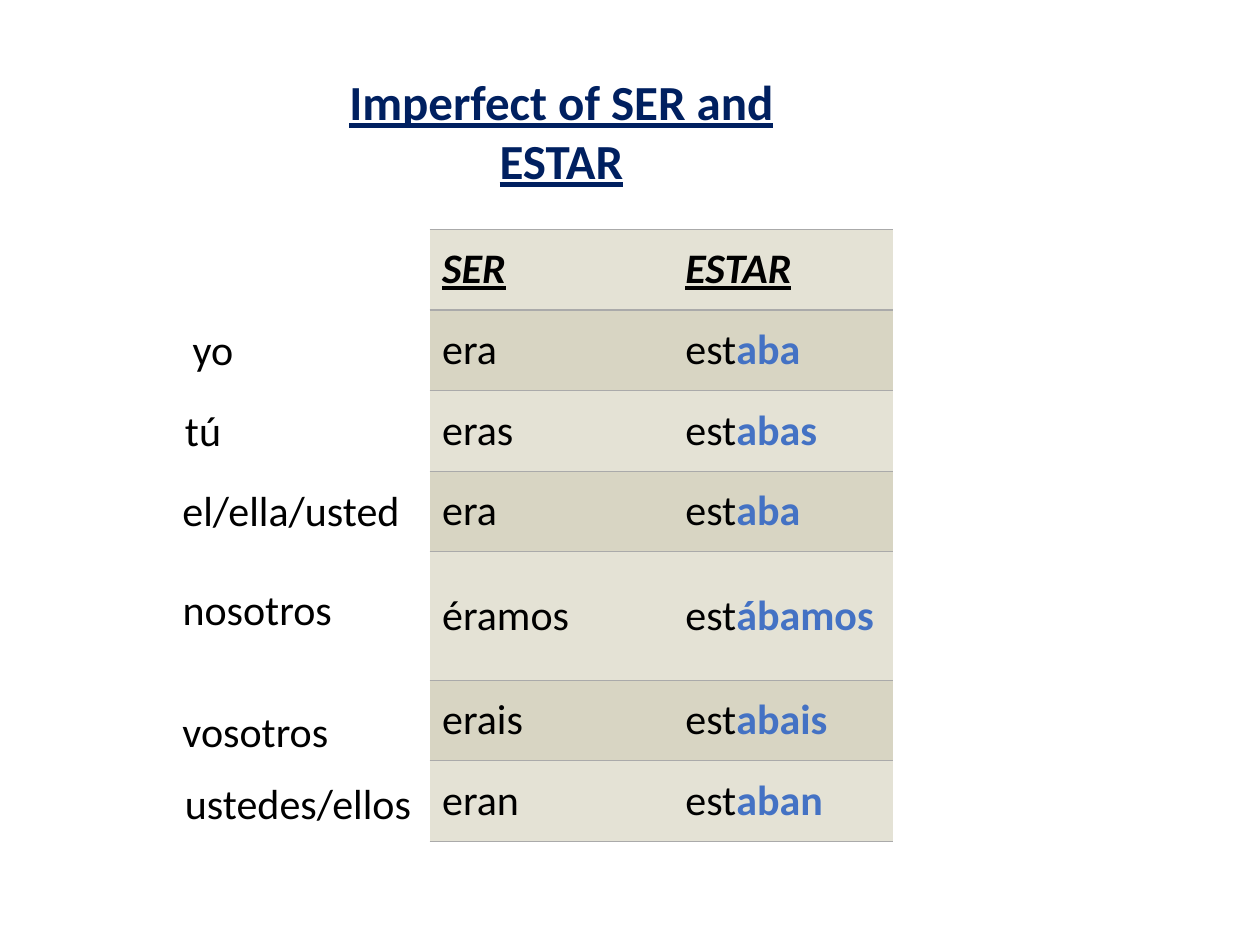
from lxml import etree
from pptx import Presentation
from pptx.dml.color import RGBColor
from pptx.enum.text import MSO_ANCHOR, MSO_AUTO_SIZE, PP_ALIGN
from pptx.oxml.ns import qn
from pptx.util import Inches, Pt

MIDDLE = MSO_ANCHOR.MIDDLE
GROW = MSO_AUTO_SIZE.SHAPE_TO_FIT_TEXT
LEFT, CENTER = PP_ALIGN.LEFT, PP_ALIGN.CENTER

BLACK = RGBColor(0x00, 0x00, 0x00)
NAVY = RGBColor(0x00, 0x20, 0x60)
BLUE = RGBColor(0x44, 0x72, 0xC4)
BANDS = (RGBColor(0xE4, 0xE2, 0xD5), RGBColor(0xD8, 0xD5, 0xC3))
RULE = RGBColor(0xAA, 0xAA, 0xAA)
RULE_WIDTH = Pt(0.75)

BODY = {"name": "Calibri", "size": Pt(24), "bold": False, "italic": False, "underline": False}
HEADER = {**BODY, "bold": True, "italic": True, "underline": True}
ENDING = {**BODY, "bold": True}
TITLE = {**BODY, "size": Pt(28), "bold": True, "underline": True}

COLUMN_WIDTHS = (1.93, 1.75)
ROW_HEIGHT, TALL_ROW_HEIGHT = 0.64, 1.02
VERB_FORMS = (
    ("era", "aba"),
    ("eras", "abas"),
    ("era", "aba"),
    ("éramos", "ábamos"),
    ("erais", "abais"),
    ("eran", "aban"),
)
PRONOUNS = (
    ("yo", 1.43, 2.52, 1.24),
    ("tú", 1.37, 3.16, 1.24),
    ("el/ella/usted", 1.35, 3.8, 1.93),
    ("nosotros", 1.35, 4.58, 1.62),
    ("vosotros", 1.35, 5.55, 1.4),
    ("ustedes/ellos", 1.37, 6.12, 2.03),
)


class VerbPage:
    """Holds the text style and the page being filled."""

    def __init__(self, page):
        self.page = page

    def add_span(self, para, text, style=BODY, color=BLACK):
        span = para.add_run()
        span.text = text
        for name, value in style.items():
            setattr(span.font, name, value)
        span.font.color.rgb = color

    def text_box(self, text, left, top, width, height=0.5, style=BODY, color=BLACK, align=LEFT):
        box = self.page.shapes.add_textbox(
            Inches(left), Inches(top), Inches(width), Inches(height)
        )
        box.text_frame.word_wrap = True
        box.text_frame.auto_size = GROW
        para = box.text_frame.paragraphs[0]
        para.alignment = align
        self.add_span(para, text, style, color)

    def rule_cell(self, cell):
        """Draw rules above and below the cell, and none at its sides."""
        properties = cell._tc.get_or_add_tcPr()
        for index, side in enumerate(("lnL", "lnR", "lnT", "lnB")):
            line = etree.Element(qn(f"a:{side}"), w=str(RULE_WIDTH))
            if side in ("lnT", "lnB"):
                fill = etree.SubElement(line, qn("a:solidFill"))
                etree.SubElement(fill, qn("a:srgbClr"), val=str(RULE))
            else:
                etree.SubElement(line, qn("a:noFill"))
            properties.insert(index, line)

    def table(self, rows, left, top, widths, heights):
        """Add a banded table; each cell is a list of (text, style, color)."""
        table = self.page.shapes.add_table(
            len(rows), len(widths), Inches(left), Inches(top),
            Inches(sum(widths)), Inches(sum(heights)),
        ).table
        table.first_row = table.horz_banding = False
        for column, width in zip(table.columns, widths):
            column.width = Inches(width)
        for index, (row, height) in enumerate(zip(rows, heights)):
            table.rows[index].height = Inches(height)
            for cell, spans in zip(table.rows[index].cells, row):
                cell.fill.solid()
                cell.fill.fore_color.rgb = BANDS[index % 2]
                cell.vertical_anchor = MIDDLE
                for side in ("left", "right", "top", "bottom"):
                    setattr(cell, f"margin_{side}", Inches(0.1))
                self.rule_cell(cell)
                for span in spans:
                    self.add_span(cell.text_frame.paragraphs[0], *span)


def main():
    deck = Presentation()
    deck.slide_width, deck.slide_height = Inches(10), Inches(7.5)
    verbs = VerbPage(deck.slides.add_slide(deck.slide_layouts[6]))

    rows = [[[(verb, HEADER, BLACK)] for verb in ("SER", "ESTAR")]]
    for ser, ending in VERB_FORMS:
        rows.append([[(ser, BODY, BLACK)], [("est", BODY, BLACK), (ending, ENDING, BLUE)]])
    heights = [ROW_HEIGHT] * len(rows)
    heights[4] = TALL_ROW_HEIGHT
    verbs.table(rows, 3.41, 1.82, COLUMN_WIDTHS, heights)

    for pronoun in PRONOUNS:
        verbs.text_box(*pronoun)
    verbs.text_box("Imperfect of SER and ESTAR", 2.35, 0.52, 4.21, 1.04, TITLE, NAVY, CENTER)

    deck.save("out.pptx")


if __name__ == "__main__":
    main()
